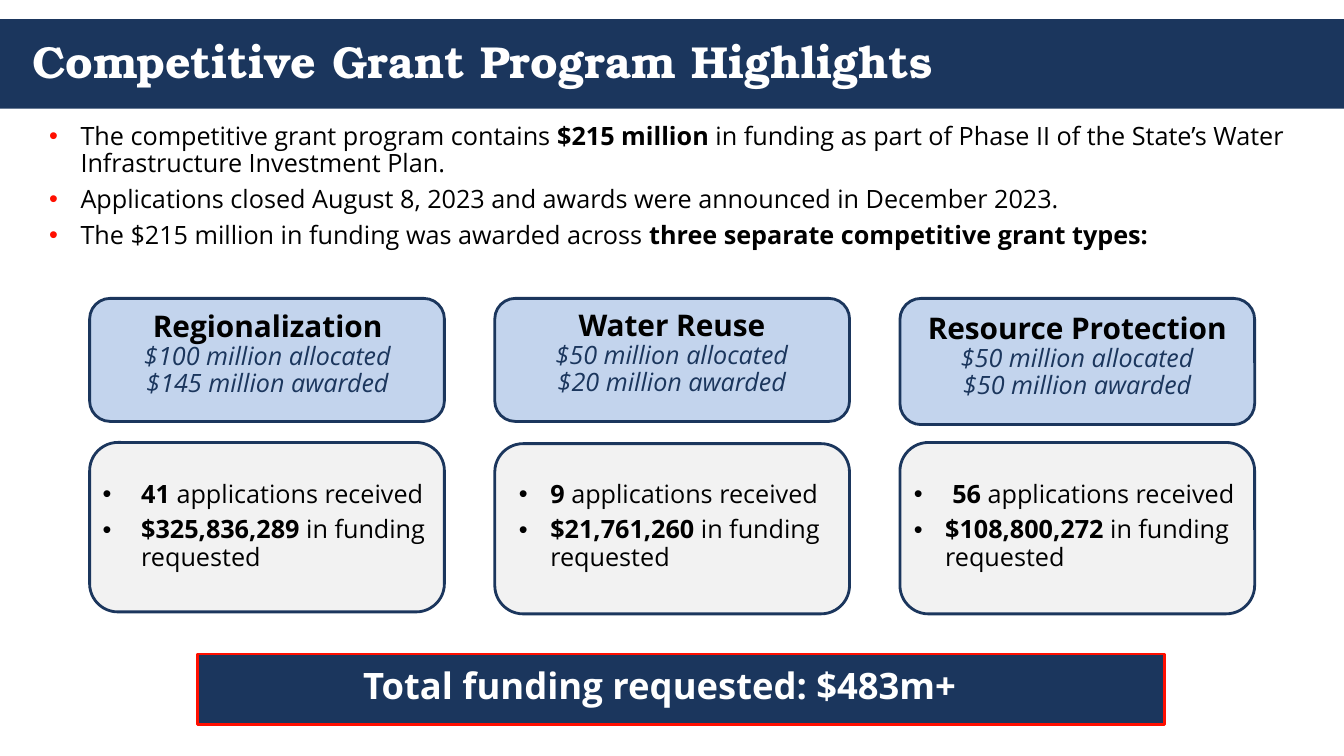
from lxml import etree
from pptx import Presentation
from pptx import util as u
from pptx.dml.color import RGBColor
from pptx.enum import shapes, text
from pptx.oxml import ns

NAVY = RGBColor(0x1B, 0x36, 0x5D)
SKY = RGBColor(0xC3, 0xD4, 0xED)
GRAY = RGBColor(0xF2, 0xF2, 0xF2)
RED = RGBColor(0xFF, 0x0F, 0x00)
BLACK = RGBColor(0, 0, 0)
WHITE = RGBColor(0xFF, 0xFF, 0xFF)
RECT = shapes.MSO_SHAPE.RECTANGLE
ROUND = shapes.MSO_SHAPE.ROUNDED_RECTANGLE

CARD_LEFT, CARD_PITCH, CARD_WIDTH = 2.26, 10.21, 8.94

GRANTS = [
    dict(name="Regionalization", allocated="$100 million", awarded="$145 million",
         count="41 ", requested="$325,836,289 ", head_height=3.1, body=(11.15, 4.27),
         head_text=(3.25, 7.72, 6.99), body_text=(2.34, 8.76), indents=(0.97, 0.97)),
    dict(name="Water Reuse", allocated="$50 million", awarded="$20 million",
         count="9 ", requested="$21,761,260 ", head_height=3.1, body=(11.18, 4.29),
         head_text=(13.44, 7.7, 6.99), body_text=(12.83, 8.26), indents=(0.79, 0.79)),
    dict(name="Resource Protection", allocated="$50 million", awarded="$50 million",
         count="56 ", requested="$108,800,272 ", head_height=3.18, body=(11.15, 4.32),
         head_text=(22.78, 7.77, 8.74), body_text=(22.78, 8.74), indents=(0.97, 0.79)),
]


def add_run(p, content, size=18, color=BLACK, bold=False, italic=False, font="Open Sans"):
    r = p.add_run()
    r.text = content
    r.font.name = font
    r.font.size = u.Pt(size)
    r.font.color.rgb = color
    r.font.bold = bold
    r.font.italic = italic


class Deck:
    def __init__(self, prs):
        self.s = prs.slides.add_slide(prs.slide_layouts[6])
        self.line_width = u.Pt(2)
        self.line_spacing = 0.9

    def box(self, kind, left, top, width, height, fill, line=None):
        sp = self.s.shapes.add_shape(kind, u.Cm(left), u.Cm(top), u.Cm(width), u.Cm(height))
        sp.shadow.inherit = False
        sp.fill.solid()
        sp.fill.fore_color.rgb = fill
        if line is None:
            sp.line.fill.background()
        else:
            sp.line.color.rgb = line
            sp.line.width = self.line_width

    def text_frame(self, left, top, width, height, grow=True):
        sp = self.s.shapes.add_textbox(u.Cm(left), u.Cm(top), u.Cm(width), u.Cm(height))
        tf = sp.text_frame
        tf.word_wrap = True
        if grow:
            tf.auto_size = text.MSO_AUTO_SIZE.SHAPE_TO_FIT_TEXT
        return tf

    def paragraph(self, tf, align=None):
        p = tf.paragraphs[0]
        if p.runs:
            p = tf.add_paragraph()
        p.line_spacing = self.line_spacing
        p.alignment = align
        return p

    def bullet(self, tf, runs, indent, color=None):
        p = self.paragraph(tf)
        p.space_after = u.Pt(6)
        pPr = p._p.get_or_add_pPr()
        pPr.set("marL", str(u.Cm(indent)))
        pPr.set("indent", str(-u.Cm(indent)))
        if color is not None:
            clr = etree.SubElement(pPr, ns.qn("a:buClr"))
            etree.SubElement(clr, ns.qn("a:srgbClr"), val=str(color))
        etree.SubElement(pPr, ns.qn("a:buFont"), typeface="Arial")
        etree.SubElement(pPr, ns.qn("a:buChar"), char="•")
        for content, bold in runs:
            add_run(p, content, bold=bold)

    def grant(self, left, g):
        body_top, body_height = g["body"]
        self.box(ROUND, left, body_top, CARD_WIDTH, body_height, GRAY, NAVY)
        self.box(ROUND, left, 7.52, CARD_WIDTH, g["head_height"], SKY, NAVY)

        tf = self.text_frame(*g["head_text"], 2.72)
        add_run(self.paragraph(tf, text.PP_ALIGN.CENTER), g["name"], size=21.3, bold=True)
        for line in (g["allocated"] + " allocated", g["awarded"] + " awarded"):
            add_run(self.paragraph(tf, text.PP_ALIGN.CENTER), line, color=NAVY, italic=True)

        text_left, text_width = g["body_text"]
        tf = self.text_frame(text_left, 12.01, text_width, 2.77)
        facts = [(g["count"], "applications received"),
                 (g["requested"], "in funding requested")]
        for (figure, label), indent in zip(facts, g["indents"]):
            self.bullet(tf, [(figure, True), (label, False)], indent)


def main():
    prs = Presentation()
    prs.slide_width, prs.slide_height = u.Cm(33.87), u.Cm(19.05)
    deck = Deck(prs)

    deck.box(RECT, 0, 0.48, 33.87, 2.26, NAVY)
    tf = deck.text_frame(0.56, 0.48, 32.74, 2.29, grow=False)
    tf.vertical_anchor = text.MSO_ANCHOR.MIDDLE
    add_run(deck.paragraph(tf), "Competitive Grant Program Highlights",
            size=32, color=WHITE, bold=True, font="TeX Gyre Bonum")

    tf = deck.text_frame(0.99, 3, 32.28, 4.75)
    intro = [
        [("The competitive grant program contains ", False), ("$215 million ", True),
         ("in funding as part of Phase II of the State’s Water Infrastructure "
          "Investment Plan.", False)],
        [("Applications closed August 8, 2023 and awards were announced in "
          "December 2023.", False)],
        [("The $215 million in funding was awarded across ", False),
         ("three separate competitive grant types:", True)],
    ]
    for runs in intro:
        deck.bullet(tf, runs, 0.79, RED)

    for i, g in enumerate(GRANTS):
        deck.grant(CARD_LEFT + i * CARD_PITCH, g)

    deck.box(RECT, 4.98, 16.48, 24.36, 1.78, NAVY, RED)
    tf = deck.text_frame(8.97, 16.74, 15.8, 1.3)
    tf.margin_left = tf.margin_right = u.Cm(0.18)
    tf.margin_top = tf.margin_bottom = u.Cm(0.1)
    add_run(deck.paragraph(tf), "Total funding requested: $483m+",
            size=26, color=WHITE, bold=True)

    prs.save("out.pptx")


if __name__ == "__main__":
    main()
